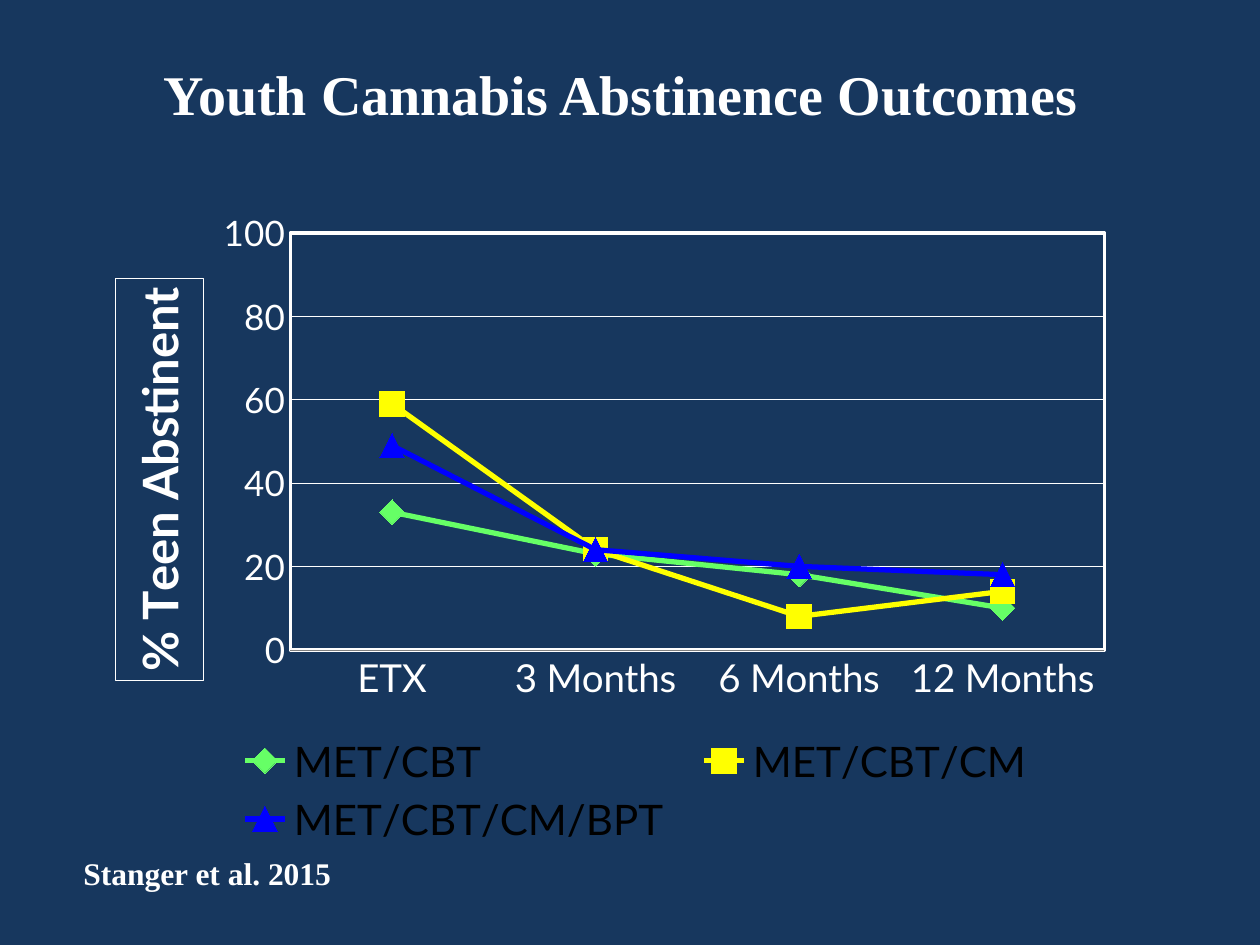
"""Build a slide with a line chart of youth cannabis abstinence outcomes."""
from lxml import etree
from pptx import Presentation
from pptx.chart.data import CategoryChartData
from pptx.dml.color import RGBColor
from pptx.enum.chart import XL_CHART_TYPE, XL_LEGEND_POSITION, XL_MARKER_STYLE, XL_TICK_MARK
from pptx.enum.text import MSO_AUTO_SIZE, PP_ALIGN
from pptx.oxml import parse_xml
from pptx.oxml.ns import nsdecls, qn
from pptx.util import Inches, Pt

LINE_MARKERS = XL_CHART_TYPE.LINE_MARKERS
BOTTOM = XL_LEGEND_POSITION.BOTTOM
NO_TICK = XL_TICK_MARK.NONE
DIAMOND, SQUARE, TRIANGLE = XL_MARKER_STYLE.DIAMOND, XL_MARKER_STYLE.SQUARE, XL_MARKER_STYLE.TRIANGLE
CENTER = PP_ALIGN.CENTER
GROW = MSO_AUTO_SIZE.SHAPE_TO_FIT_TEXT
WHITE, NAVY, BLACK, GRAY = "FFFFFF", "17375E", "000000", "808080"


def style_font(font, name, size, color, bold=False):
    font.name, font.size, font.bold = name, Pt(size), bold
    font.color.rgb = RGBColor.from_string(color)


def place(element, position, **shares):
    for layout in element.findall(qn("c:layout")):
        element.remove(layout)
    layout = parse_xml(f"<c:layout {nsdecls('c')}><c:manualLayout/></c:layout>")
    for tag, value in shares.items():
        etree.SubElement(layout[0], qn(f"c:{tag}")).set("val", str(value))
    element.insert(position, layout)


presentation = Presentation()
presentation.slide_width, presentation.slide_height = Inches(10), Inches(7.5)
slide = presentation.slides.add_slide(presentation.slide_layouts[6])
slide.background.fill.solid()
slide.background.fill.fore_color.rgb = RGBColor.from_string(NAVY)

captions = [
    ("Youth Cannabis Abstinence Outcomes", 32, True, (0.75, 0.42, 8.36, 0.64)),
    ("Stanger et al. 2015", 18, False, (0.55, 6.73, 2.19, 0.4)),
]
for text, size, wrap, box in captions:
    text_frame = slide.shapes.add_textbox(*map(Inches, box)).text_frame
    text_frame.word_wrap = wrap
    text_frame.auto_size = GROW
    text_frame.text = text
    paragraph = text_frame.paragraphs[0]
    paragraph.alignment = CENTER
    style_font(paragraph.runs[0].font, "Times New Roman", size, WHITE, True)

series_styles = [
    ("MET/CBT", (33, 23, 18, 10), "66FF66", DIAMOND),
    ("MET/CBT/CM", (59, 24, 8, 14), "FFFF00", SQUARE),
    ("MET/CBT/CM/BPT", (49, 24, 20, 18), "0000FF", TRIANGLE),
]
chart_data = CategoryChartData()
chart_data.categories = ["ETX", "3 Months", "6 Months", "12 Months"]
for name, values, _, _ in series_styles:
    chart_data.add_series(name, values)
chart_box = map(Inches, (0.75, 1.59, 8.18, 5.17))
chart = slide.shapes.add_chart(LINE_MARKERS, *chart_box, chart_data).chart
chart.has_title = False
style_font(chart.font, "Lato", 18, BLACK)
chart.plots[0].vary_by_categories = False

for series, (_, _, color, marker_style) in zip(chart.plots[0].series, series_styles):
    series.smooth = False
    series.format.line.width = Pt(3)
    series.format.line.color.rgb = RGBColor.from_string(color)
    series.marker.style, series.marker.size = marker_style, 14
    series.marker.format.fill.solid()
    series.marker.format.fill.fore_color.rgb = RGBColor.from_string(color)
    series.marker.format.line.color.rgb = RGBColor.from_string(color)

category_axis, value_axis = chart.category_axis, chart.value_axis
for axis, size in ((category_axis, 22), (value_axis, 20)):
    axis.major_tick_mark = axis.minor_tick_mark = NO_TICK
    style_font(axis.tick_labels.font, "Lato", size, WHITE)
category_axis.format.line.color.rgb = RGBColor.from_string(GRAY)
category_axis.format.line.width = Pt(0.25)
value_axis.format.line.fill.background()
value_axis.minimum_scale, value_axis.maximum_scale, value_axis.major_unit = 0, 100, 20

axis_title = value_axis.axis_title
axis_title.text_frame.text = "% Teen Abstinent"
style_font(axis_title.text_frame.paragraphs[0].runs[0].font, "Lato", 28, WHITE, True)
title_element = axis_title._element
title_element.find(".//" + qn("a:bodyPr")).set("rot", "-5400000")
place(title_element, 1, xMode="edge", yMode="edge", x=0.02, y=0.12)
for line in (value_axis.major_gridlines.format.line, axis_title.format.line):
    line.color.rgb = RGBColor.from_string(WHITE)
    line.width = Pt(0.25)

chart.has_legend = True
chart.legend.position = BOTTOM
chart.legend.include_in_layout = False
style_font(chart.legend.font, "Lato", 24, BLACK)
place(chart.legend._element, 1, xMode="edge", yMode="edge", x=0.12, y=0.81, w=0.81, h=0.19)

plot_area = chart._chartSpace.find(".//" + qn("c:plotArea"))
place(plot_area, 0, layoutTarget="inner", xMode="edge", yMode="edge", x=0.19, y=0.05, w=0.79, h=0.64)
plot_area.append(parse_xml(
    f'<c:spPr {nsdecls("c", "a")}><a:noFill/><a:ln w="{Pt(2)}"><a:solidFill>'
    f'<a:srgbClr val="{WHITE}"/></a:solidFill></a:ln></c:spPr>'))

presentation.save("out.pptx")
